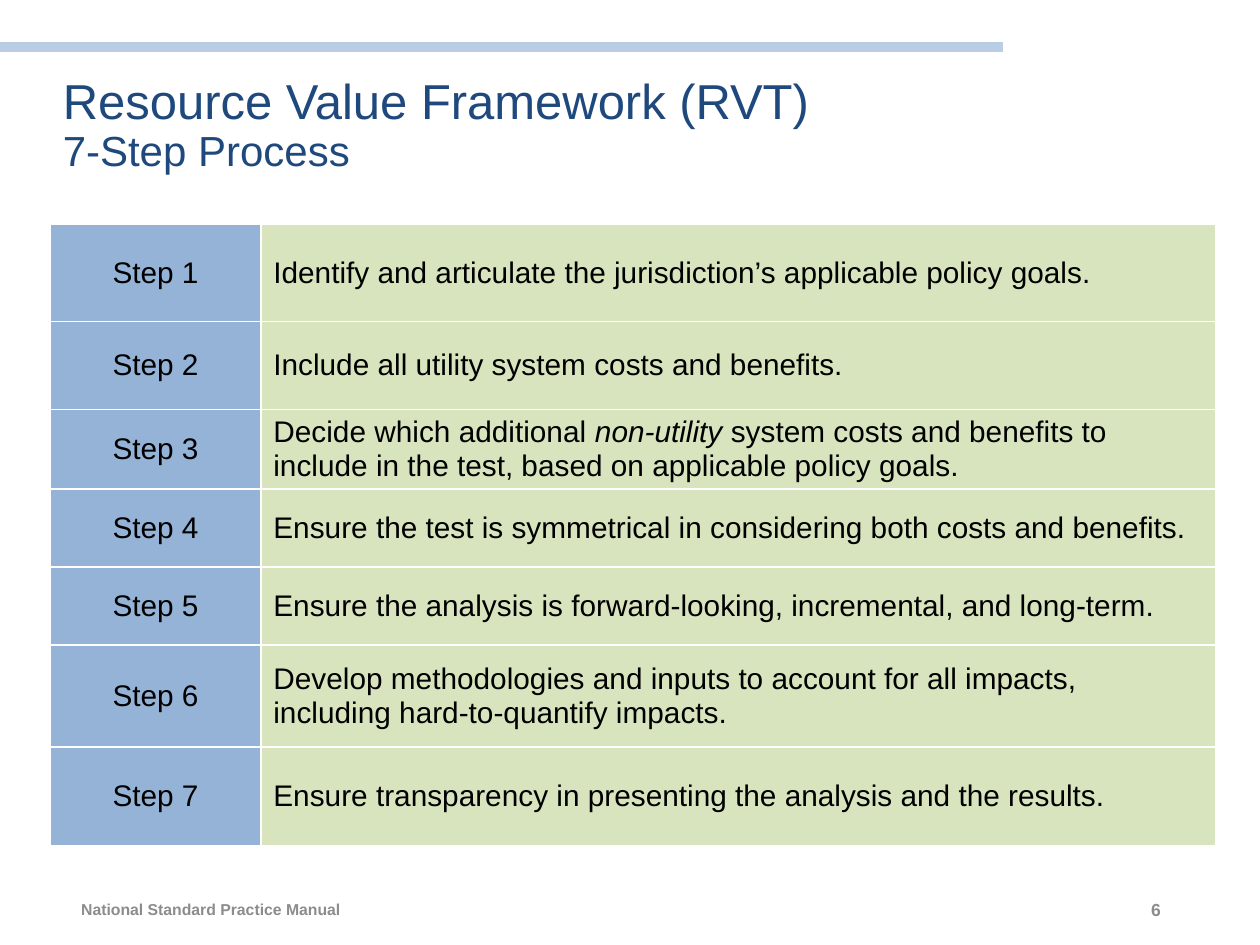
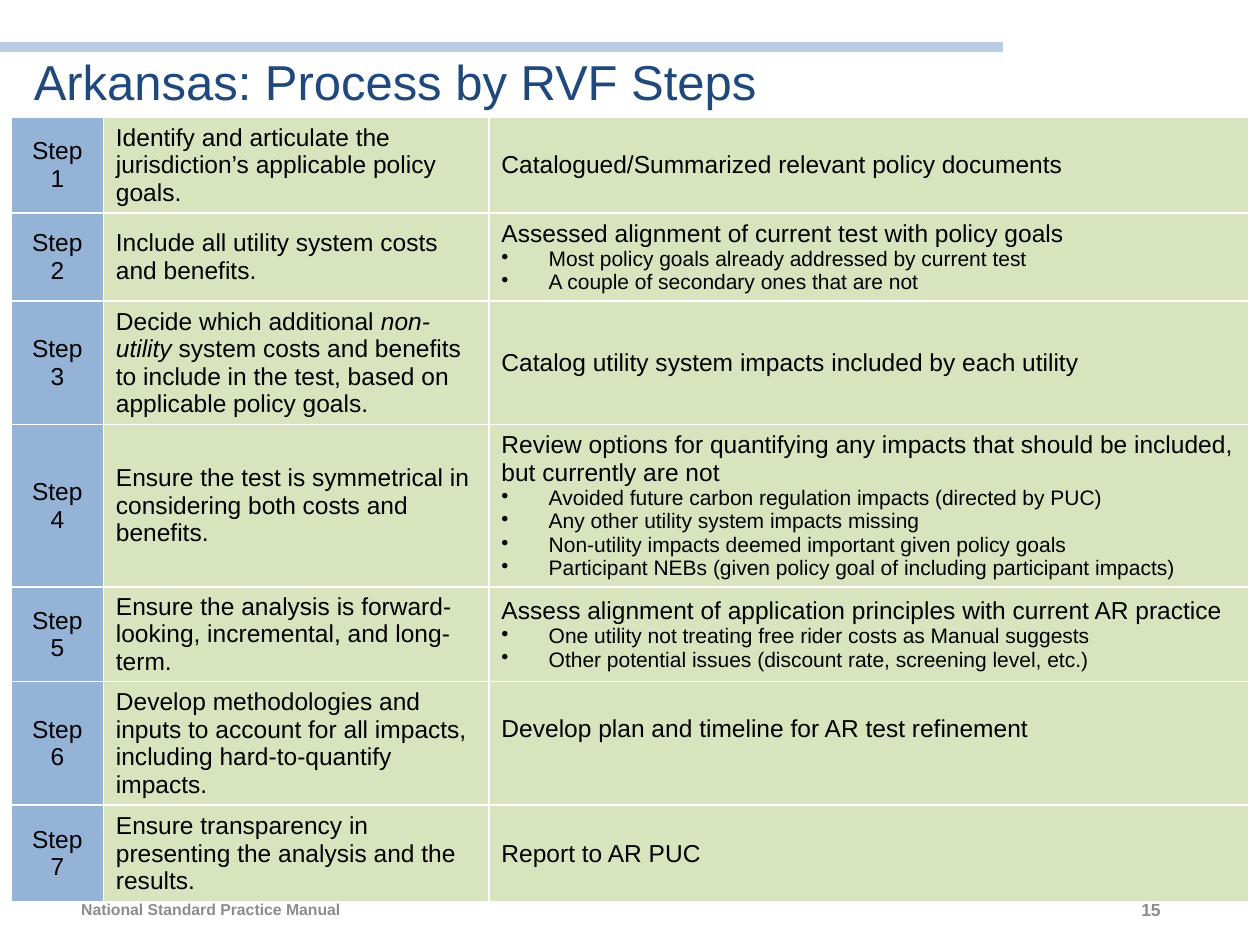
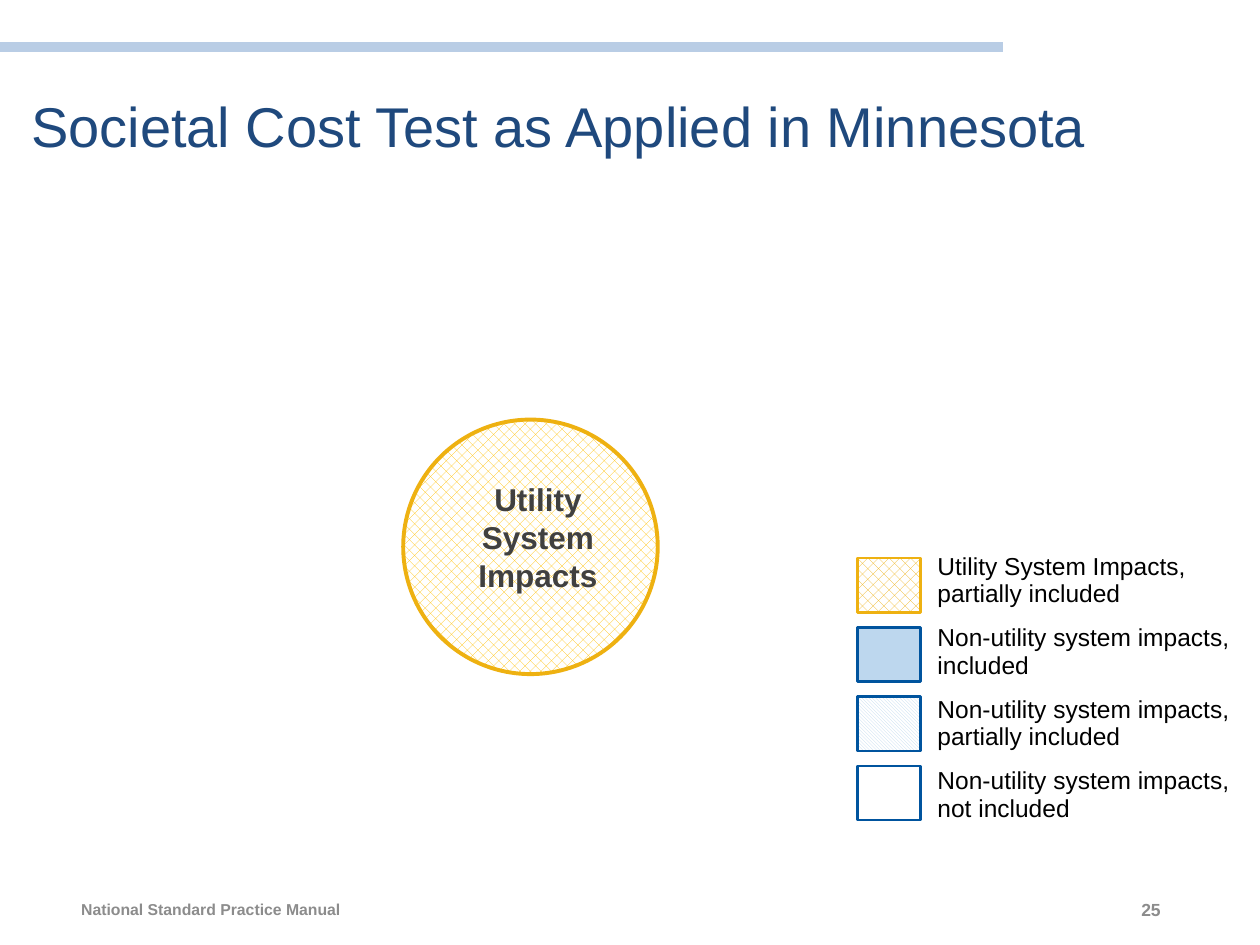
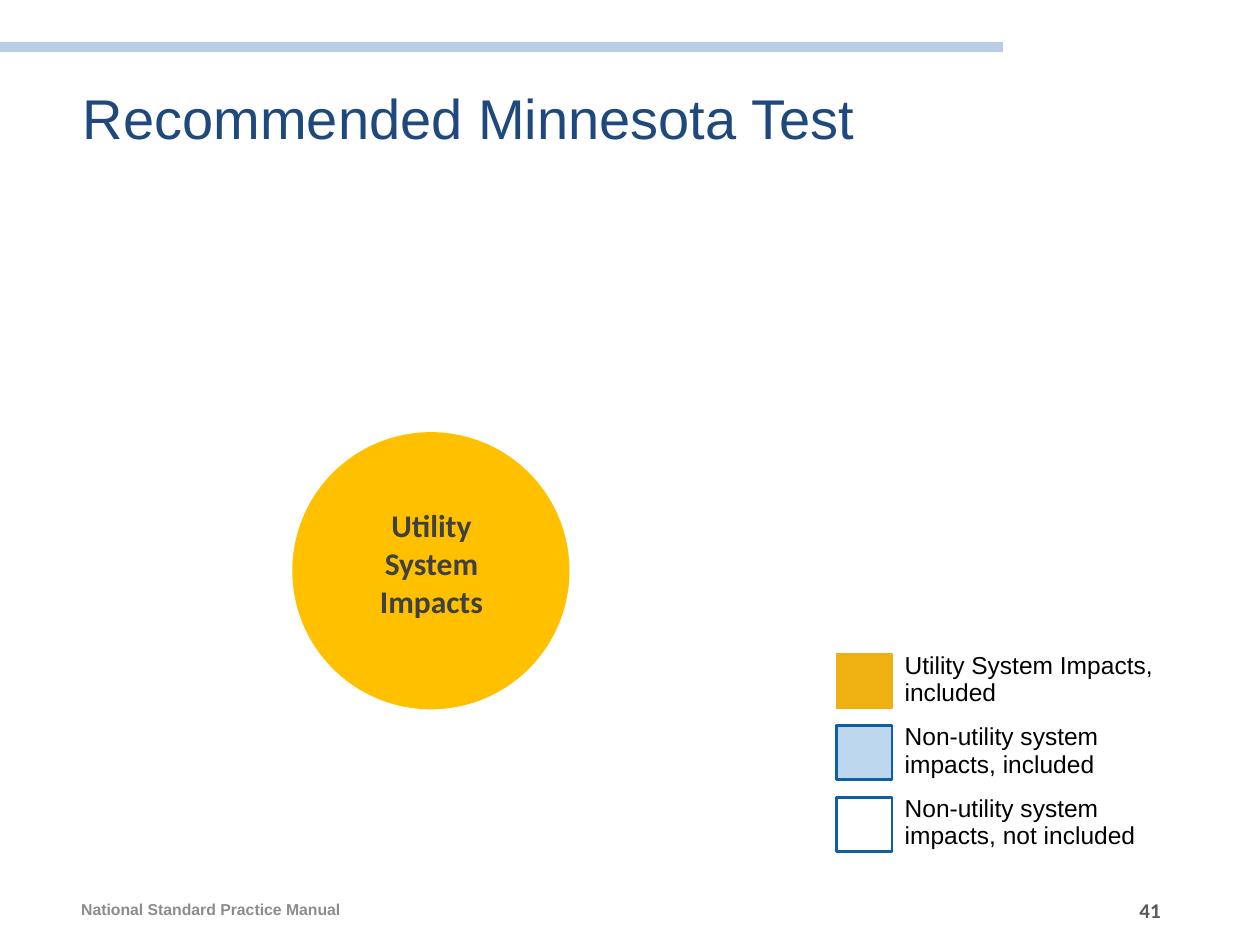
from lxml import etree
from pptx import Presentation
from pptx.dml.color import RGBColor
from pptx.enum.dml import MSO_PATTERN
from pptx.enum.shapes import MSO_CONNECTOR, MSO_SHAPE
from pptx.enum.text import MSO_ANCHOR, PP_ALIGN
from pptx.oxml.ns import qn
from pptx.util import Inches, Pt

# The slide is a grid of 100 columns by 75 rows of square cells
UNIT = Inches(0.1)
COLUMNS, ROWS = 100, 75

STRAIGHT = MSO_CONNECTOR.STRAIGHT
RECTANGLE, OVAL = MSO_SHAPE.RECTANGLE, MSO_SHAPE.OVAL
LEFT, CENTER, RIGHT = PP_ALIGN.LEFT, PP_ALIGN.CENTER, PP_ALIGN.RIGHT
TOP, MIDDLE = MSO_ANCHOR.TOP, MSO_ANCHOR.MIDDLE
WEAVE, DIAGONAL = MSO_PATTERN.WEAVE, MSO_PATTERN.DARK_DOWNWARD_DIAGONAL

BLACK = RGBColor(0x00, 0x00, 0x00)
WHITE = RGBColor(0xFF, 0xFF, 0xFF)
NAVY = RGBColor(0x1F, 0x49, 0x7D)
BAND_BLUE = RGBColor(0xB9, 0xCD, 0xE5)
STEP_BLUE = RGBColor(0x95, 0xB3, 0xD7)
GOAL_GREEN = RGBColor(0xD7, 0xE4, 0xBD)
FOOTER_GRAY = RGBColor(0x8C, 0x8C, 0x8C)
NUMBER_GRAY = RGBColor(0x59, 0x59, 0x59)
LABEL_GRAY = RGBColor(0x40, 0x40, 0x40)
YELLOW = RGBColor(0xFF, 0xC0, 0x00)
GOLD = RGBColor(0xEE, 0xB1, 0x11)
PALE_BLUE = RGBColor(0xBD, 0xD7, 0xEE)
DEEP_BLUE = RGBColor(0x00, 0x54, 0x9E)
MID_BLUE = RGBColor(0x0F, 0x5F, 0xA5)

# Text between asterisks is italic
STEPS = [
    "Identify and articulate the jurisdiction’s applicable policy goals.",
    "Include all utility system costs and benefits.",
    "Decide which additional *non-utility* system costs and benefits to "
    "include in the test, based on applicable policy goals.",
    "Ensure the test is symmetrical in considering both costs and benefits.",
    "Ensure the analysis is forward-looking, incremental, and long-term.",
    "Develop methodologies and inputs to account for all impacts, "
    "including hard-to-quantify impacts.",
    "Ensure transparency in presenting the analysis and the results.",
]
STEP_ROWS = [7.7, 7, 6.3, 6.2, 6.2, 8.1, 7.8]
ARKANSAS_ROWS = [7.6, 7, 9.8, 12.9, 7.5, 9.8, 7.7]

# One activity per step, followed by its bullets
ARKANSAS = [
    ["Catalogued/Summarized relevant policy documents"],
    ["Assessed alignment of current test with policy goals",
     "Most policy goals already addressed by current test",
     "A couple of secondary ones that are not"],
    ["Catalog utility system impacts included by each utility"],
    ["Review options for quantifying any impacts that should be included, "
     "but currently are not",
     "Avoided future carbon regulation impacts (directed by PUC)",
     "Any other utility system impacts missing",
     "Non-utility impacts deemed important given policy goals",
     "Participant NEBs (given policy goal of including participant impacts)"],
    ["Assess alignment of application principles with current AR practice",
     "One utility not treating free rider costs as Manual suggests",
     "Other potential issues (discount rate, screening level, etc.)"],
    ["Develop plan and timeline for AR test refinement"],
    ["Report to AR PUC"],
]


def grid(*cells):
    return [round(cell * UNIT) for cell in cells]


# Text
def add_text(para, text, size=14, color=BLACK, font="Arial", bold=False,
             align=LEFT):
    para.alignment = align
    for index, part in enumerate(text.split("*")):
        span = para.add_run()
        span.text = part
        span.font.name = font
        span.font.size = Pt(size)
        span.font.bold = bold
        span.font.italic = index % 2 == 1
        span.font.color.rgb = color


def add_box(page, place, text, anchor=MIDDLE, **style):
    frame = page.shapes.add_textbox(*grid(*place)).text_frame
    frame.word_wrap = True
    frame.vertical_anchor = anchor
    para = frame.paragraphs[0]
    add_text(para, text, **style)
    return para


def add_bullet(para):
    properties = para._p.get_or_add_pPr()
    indent = grid(3.75)[0]
    properties.set("marL", str(indent))
    properties.set("indent", str(-indent))
    etree.SubElement(properties, qn("a:buChar"), char="•")


# What every slide shares
def add_page(deck, title, place, size, number, subtitle=None,
             number_style=None):
    page = deck.slides.add_slide(deck.slide_layouts[6])
    band = page.shapes.add_connector(STRAIGHT, *grid(-0.6, 3.75, 79.6, 3.75))
    band.line.color.rgb = BAND_BLUE
    band.line.width = Pt(6)
    etree.SubElement(band._element.spPr, qn("a:effectLst"))

    add_box(page, (0, 70.15, 33.8, 4), "National Standard Practice Manual ",
            size=9, color=FOOTER_GRAY, bold=True, align=CENTER)
    add_box(page, (70.6, 70.3, 22.5, 3.8), str(number), bold=True,
            align=RIGHT, **(number_style or dict(size=10, color=FOOTER_GRAY)))

    para = add_box(page, place, title, size=size, color=NAVY)
    para.line_spacing = 0.9
    if subtitle:
        para.add_line_break()
        add_text(para, subtitle, size=24, color=NAVY)
    return page


# Tables
def add_grid_table(page, left, top, widths, heights):
    frame = page.shapes.add_table(
        len(heights), len(widths),
        *grid(left, top, sum(widths), sum(heights)))
    table = frame.table
    table.first_row = table.horz_banding = False
    for column, width in zip(table.columns, grid(*widths)):
        column.width = width
    for row, height in zip(table.rows, grid(*heights)):
        row.height = height
    return table


def add_borders(cell, color):
    properties = cell._tc.get_or_add_tcPr()
    for index, side in enumerate(("lnL", "lnR", "lnT", "lnB")):
        line = etree.Element(qn(f"a:{side}"), w=str(Pt(1)))
        fill = etree.SubElement(line, qn("a:solidFill"))
        etree.SubElement(fill, qn("a:srgbClr"), val=str(color))
        properties.insert(index, line)


def fill_cell(cell, lines, color, size, align=LEFT):
    cell.fill.solid()
    cell.fill.fore_color.rgb = color
    cell.vertical_anchor = MIDDLE
    cell.margin_top = cell.margin_bottom = grid(0.1)[0]
    add_borders(cell, WHITE)
    frame = cell.text_frame
    add_text(frame.paragraphs[0], lines[0], size=size, align=align)
    for line in lines[1:]:
        para = frame.add_paragraph()
        add_bullet(para)
        add_text(para, line, size=12)


def add_step_table(page, left, top, widths, heights, size, activities=None):
    table = add_grid_table(page, left, top, widths, heights)
    for row, goal in enumerate(STEPS):
        fill_cell(table.cell(row, 0), [f"Step {row + 1}"], STEP_BLUE, size,
                  align=CENTER)
        fill_cell(table.cell(row, 1), [goal], GOAL_GREEN, size)
        if activities:
            fill_cell(table.cell(row, 2), activities[row], GOAL_GREEN, size)
    return table


# Impact diagram
def add_shape(page, kind, place, fill=None, line=None, width=1.5,
              pattern=None):
    shape = page.shapes.add_shape(kind, *grid(*place))
    shape.shadow.inherit = False
    if pattern:
        shape.fill.patterned()
        shape.fill.pattern = pattern
        shape.fill.fore_color.rgb = fill
        shape.fill.back_color.rgb = WHITE
    elif fill:
        shape.fill.solid()
        shape.fill.fore_color.rgb = fill
    else:
        shape.fill.background()
    if line:
        shape.line.color.rgb = line
        shape.line.width = Pt(width)
    else:
        shape.line.fill.background()


def add_impact_circle(page, circle, label, font="Arial", **style):
    add_shape(page, OVAL, circle, **style)
    add_box(page, label, "Utility System Impacts", anchor=TOP, size=18,
            color=LABEL_GRAY, font=font, bold=True, align=CENTER)


def add_legend(page, text_place, swatch_place, pitch, entries, inset):
    left, top, width = text_place
    table = add_grid_table(page, left, top, [width], [5.67] * len(entries))
    swatch_left, swatch_top, swatch_width = swatch_place
    for row, (text, style) in enumerate(entries):
        cell = table.cell(row, 0)
        cell.fill.background()
        cell.margin_left = cell.margin_right = grid(inset)[0]
        add_text(cell.text_frame.paragraphs[0], text)
        add_shape(page, RECTANGLE, (swatch_left, swatch_top + row * pitch,
                                    swatch_width, 4.3), **style)


def main():
    deck = Presentation()
    deck.slide_width, deck.slide_height = grid(COLUMNS, ROWS)

    # Seven steps
    page = add_page(deck, "Resource Value Framework (RVT) ",
                    (4, 4.9, 86.2, 10.3), 28, 6, subtitle="7-Step Process")
    add_step_table(page, 4, 17.8, [16.7, 75.8], STEP_ROWS, 17)

    # Steps in Arkansas, with one activity set above the middle of its row
    page = add_page(deck, "Arkansas: Process by RVF Steps",
                    (1.7, 0.9, 95, 11.7), 28, 15)
    table = add_step_table(page, 0.9, 9.3, [7.3, 30.6, 60.3], ARKANSAS_ROWS,
                           14, ARKANSAS)
    table.cell(5, 2).margin_bottom = grid(2.3)[0]

    # Current Minnesota test
    page = add_page(deck, "Societal Cost Test as Applied in Minnesota",
                    (1.5, 5.1, 86.2, 10.3), 32, 25)
    add_impact_circle(page, (32, 33.3, 20.2, 20.2), (36.55, 37.6, 12.3, 10.1),
                      fill=YELLOW, pattern=WEAVE, line=GOLD, width=2.25)
    add_legend(page, (73.9, 43.4, 25.4), (68.05, 44.3, 5), 5.5, [
        ("Utility System Impacts, partially included",
         dict(fill=GOLD, pattern=WEAVE, line=GOLD)),
        ("Non-utility system impacts, included",
         dict(fill=PALE_BLUE, line=DEEP_BLUE)),
        ("Non-utility system impacts, partially included",
         dict(fill=PALE_BLUE, pattern=DIAGONAL, line=DEEP_BLUE)),
        ("Non-utility system impacts, not included", dict(line=DEEP_BLUE)),
    ], inset=0.5)

    # Recommended Minnesota test
    page = add_page(deck, "Recommended Minnesota Test",
                    (5.6, 4.5, 86.2, 10.3), 32, 41,
                    number_style=dict(size=12, color=NUMBER_GRAY,
                                      font="Calibri"))
    add_impact_circle(page, (23.2, 34.3, 22, 22), (28.6, 39.7, 11.3, 10.4),
                      font="Calibri", fill=YELLOW)
    add_legend(page, (70.8, 51.25, 24.8), (66.4, 51.9, 4.4), 5.7, [
        ("Utility System Impacts, included",
         dict(fill=GOLD, line=GOLD, width=1)),
        ("Non-utility system impacts, included",
         dict(fill=PALE_BLUE, line=MID_BLUE)),
        ("Non-utility system impacts, not included", dict(line=MID_BLUE)),
    ], inset=1)

    deck.save("out.pptx")


if __name__ == "__main__":
    main()
